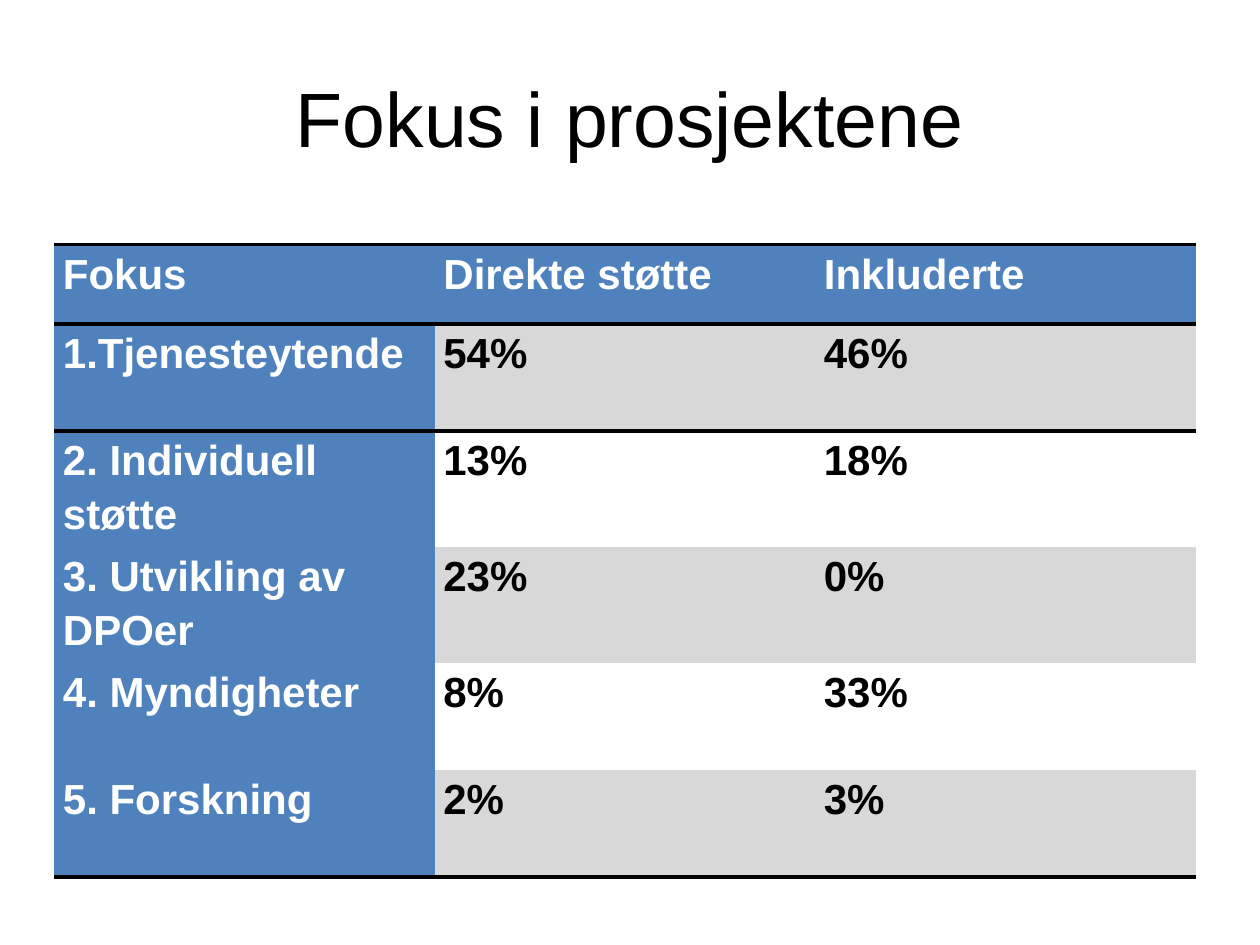
from lxml import etree
from pptx import Presentation
from pptx.dml.color import RGBColor
from pptx.enum.text import MSO_ANCHOR, PP_ALIGN
from pptx.oxml.ns import qn
from pptx.util import Inches, Pt

CENTER = PP_ALIGN.CENTER
MIDDLE = MSO_ANCHOR.MIDDLE
BLACK = RGBColor(0x00, 0x00, 0x00)
WHITE = RGBColor(0xFF, 0xFF, 0xFF)
BLUE = RGBColor(0x4F, 0x81, 0xBD)
GRAY = RGBColor(0xD8, 0xD8, 0xD8)
FONT = "Arial"
NO_STYLE_NO_GRID = "{2D5ABB26-0587-4C30-8999-92F81FD0307C}"

ROWS = [
    ("Fokus", "Direkte støtte", "Inkluderte"),
    ("1.Tjenesteytende", "54%", "46%"),
    ("2. Individuell støtte", "13%", "18%"),
    ("3. Utvikling av DPOer", "23%", "0%"),
    ("4. Myndigheter", "8%", "33%"),
    ("5. Forskning", "2%", "3%"),
]
LAST_ROW = len(ROWS) - 1


def add_border(cell, side):
    """Draw a black rule on one side of a cell; call before setting its fill."""
    line = etree.SubElement(cell._tc.get_or_add_tcPr(), qn(f"a:ln{side}"), w=str(Pt(2.25)))
    solid_fill = etree.SubElement(line, qn("a:solidFill"))
    etree.SubElement(solid_fill, qn("a:srgbClr"), val=str(BLACK))


presentation = Presentation()
presentation.slide_width = Inches(10)
presentation.slide_height = Inches(7.5)
slide = presentation.slides.add_slide(presentation.slide_layouts[6])

title = slide.shapes.add_textbox(Inches(0.5), Inches(0.3), Inches(9), Inches(1.25))
title_frame = title.text_frame
title_frame.word_wrap = True
title_frame.vertical_anchor = MIDDLE
title_frame.text = "Fokus i prosjektene"
paragraph = title_frame.paragraphs[0]
paragraph.alignment = CENTER
paragraph.font.name = FONT
paragraph.font.size = Pt(44)
paragraph.font.color.rgb = BLACK

table = slide.shapes.add_table(
    len(ROWS), len(ROWS[0]), Inches(0.43), Inches(1.94), Inches(9.06), Inches(4.88)
).table
table._tbl.tblPr.find(qn("a:tableStyleId")).text = NO_STYLE_NO_GRID
table.first_col = True
table.horz_banding = False
for column in table.columns:
    column.width = Inches(3.02)

for row_index, texts in enumerate(ROWS):
    table.rows[row_index].height = Inches(0.63 if row_index == 0 else 0.85)
    for column_index, text in enumerate(texts):
        cell = table.cell(row_index, column_index)
        cell.margin_left = cell.margin_right = Inches(0.07)
        cell.margin_top = cell.margin_bottom = 0
        is_heading = row_index == 0 or column_index == 0

        if row_index in (0, 1):
            add_border(cell, "T")
        if row_index in (0, LAST_ROW):
            add_border(cell, "B")

        if is_heading or row_index % 2:
            cell.fill.solid()
            cell.fill.fore_color.rgb = BLUE if is_heading else GRAY
        else:
            cell.fill.background()

        cell.text = text
        paragraph = cell.text_frame.paragraphs[0]
        paragraph.line_spacing = 1.15
        paragraph.font.name = FONT
        paragraph.font.size = Pt(24)
        paragraph.font.bold = True
        paragraph.font.color.rgb = WHITE if is_heading else BLACK

presentation.save("out.pptx")
